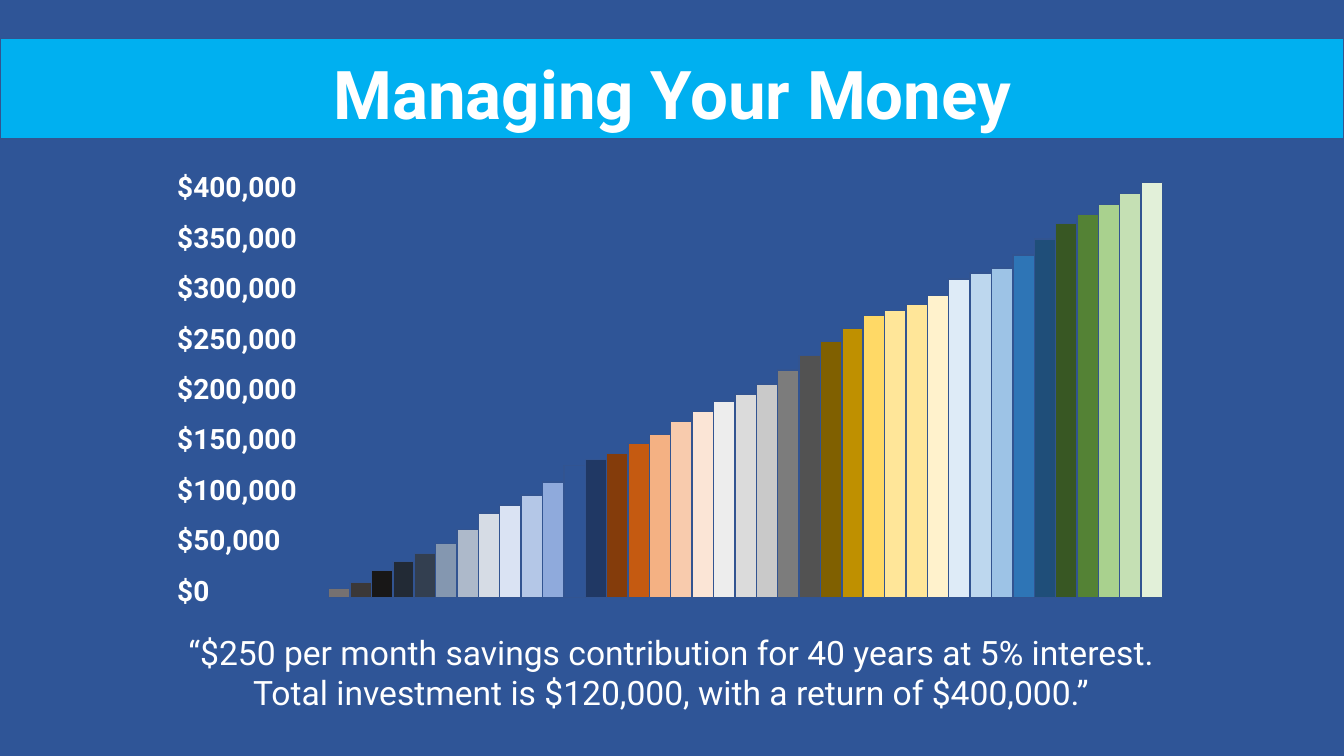
from pptx import Presentation
from pptx.dml.color import RGBColor
from pptx.enum import shapes, text
from pptx.util import Inches, Pt

TITLE = ["Managing Your Money"]
SCALE_LABELS = [f"${amount:,}" for amount in range(400_000, -1, -50_000)]
CAPTION = [
    "“$250 per month savings contribution for 40 years at 5% interest.",
    "Total investment is $120,000, with a return of $400,000.”",
]
# One bar per year: height in inches, fill colour
SAVINGS_BARS = [
    (0.09, "767171"), (0.15, "3B3838"), (0.27, "181717"), (0.36, "222A35"),
    (0.44, "333F50"), (0.54, "8497B0"), (0.68, "ADB9CA"), (0.84, "D6DCE5"),
    (0.92, "DAE3F3"), (1.02, "B4C7E7"), (1.15, "8FAADC"), (1.31, "2F5597"),
    (1.37, "203864"), (1.43, "843C0B"), (1.53, "C55A11"), (1.62, "F4B183"),
    (1.75, "F8CBAD"), (1.85, "FBE5D6"), (1.95, "EDEDED"), (2.02, "DBDBDB"),
    (2.12, "C9C9C9"), (2.26, "7C7C7C"), (2.40, "525252"), (2.54, "806000"),
    (2.67, "BF9000"), (2.80, "FFD966"), (2.85, "FFE699"), (2.91, "FFE699"),
    (3.00, "FFF2CC"), (3.16, "DEEBF7"), (3.22, "BDD7EE"), (3.27, "9DC3E6"),
    (3.40, "2E75B6"), (3.56, "1F4E79"), (3.71, "385723"), (3.80, "548235"),
    (3.90, "A9D18E"), (4.01, "C5E0B4"), (4.12, "E2F0D9"),
]

THEME = {
    "font": "Roboto",
    "background": "2F5597",
    "band": "00B0F0",
    "outline": "325491",
    "text": "FFFFFF",
    "title_size": 48,
    "label_size": 20,
    "caption_size": 24,
}

SLIDE_WIDTH, SLIDE_HEIGHT = 13.33, 7.5
BARS_LEFT, BARS_RIGHT, BASELINE = 3.26, 11.53, 5.93


def add_block(slide, left, top, width, height, fill):
    block = slide.shapes.add_shape(
        shapes.MSO_SHAPE.RECTANGLE,
        Inches(left), Inches(top), Inches(width), Inches(height))
    block.shadow.inherit = False
    block.fill.solid()
    block.fill.fore_color.rgb = RGBColor.from_string(fill)
    block.line.color.rgb = RGBColor.from_string(THEME["outline"])
    block.line.width = Pt(1)


def add_lines(slide, lines, box, size, align, bold=False, spacing=None):
    """Add a text box with one paragraph for each line."""
    frame = slide.shapes.add_textbox(*map(Inches, box)).text_frame
    frame.word_wrap = True
    frame.auto_size = text.MSO_AUTO_SIZE.SHAPE_TO_FIT_TEXT
    for index, line in enumerate(lines):
        paragraph = frame.add_paragraph() if index else frame.paragraphs[0]
        paragraph.alignment = align
        paragraph.line_spacing = spacing
        run = paragraph.add_run()
        run.text = line
        run.font.name = THEME["font"]
        run.font.size = Pt(size)
        run.font.bold = bold
        run.font.color.rgb = RGBColor.from_string(THEME["text"])


def add_bars(slide):
    bar_width = (BARS_RIGHT - BARS_LEFT) / len(SAVINGS_BARS)
    for year, (height, fill) in enumerate(SAVINGS_BARS):
        add_block(slide, BARS_LEFT + year * bar_width, BASELINE - height,
                  bar_width, height, fill)


def main():
    deck = Presentation()
    deck.slide_width = Inches(SLIDE_WIDTH)
    deck.slide_height = Inches(SLIDE_HEIGHT)
    slide = deck.slides.add_slide(deck.slide_layouts[6])
    slide.background.fill.solid()
    slide.background.fill.fore_color.rgb = RGBColor.from_string(
        THEME["background"])

    centre, left = text.PP_ALIGN.CENTER, text.PP_ALIGN.LEFT
    add_block(slide, 0, 0.38, SLIDE_WIDTH, 1, THEME["band"])
    add_lines(slide, TITLE, (1.78, 0.47, 9.78, 0.91),
              THEME["title_size"], centre, bold=True)
    add_bars(slide)
    add_lines(slide, SCALE_LABELS, (1.66, 1.47, 2.2, 4.6),
              THEME["label_size"], left, bold=True, spacing=1.5)
    add_lines(slide, CAPTION, (1.38, 6.22, 10.55, 0.91),
              THEME["caption_size"], centre)
    deck.save("out.pptx")


if __name__ == "__main__":
    main()
